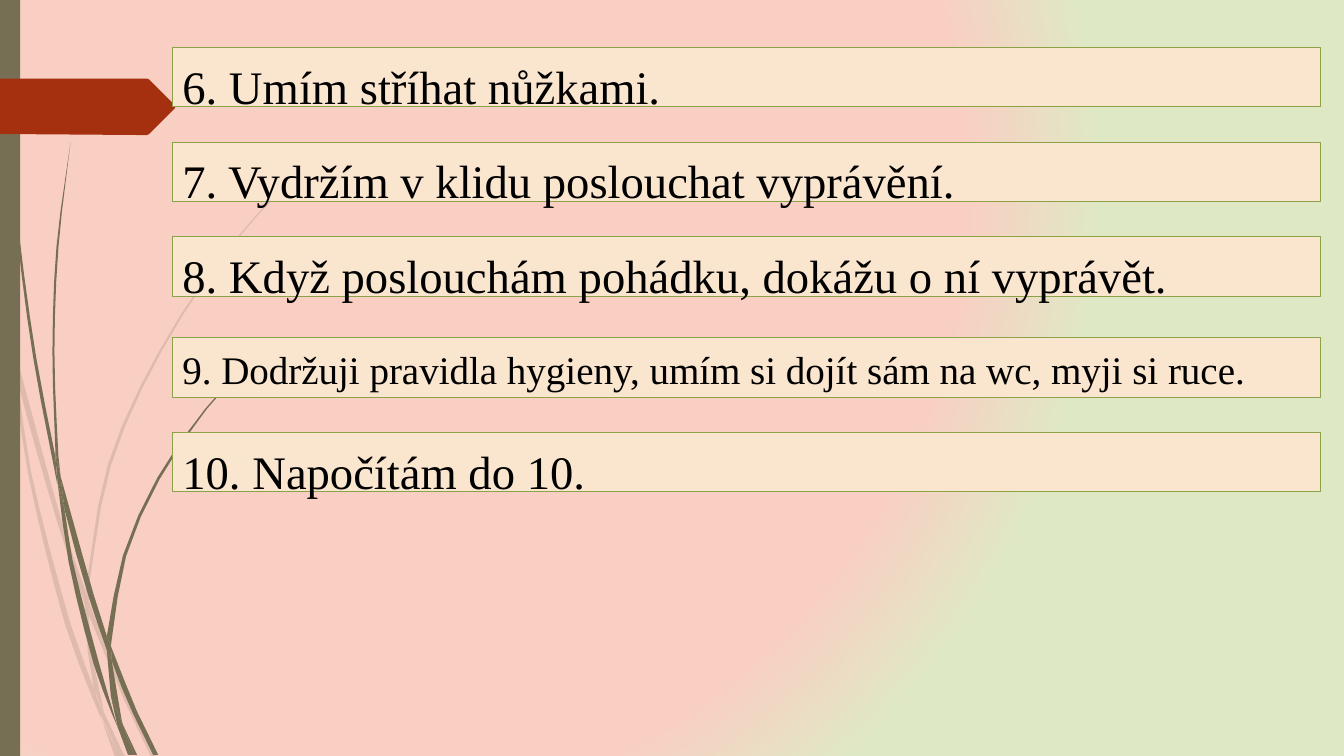
from dataclasses import dataclass
from math import ceil, dist

from lxml.etree import SubElement
from pptx import Presentation
from pptx.dml.color import RGBColor
from pptx.enum.shapes import MSO_SHAPE
from pptx.enum.text import MSO_ANCHOR, MSO_AUTO_SIZE, PP_ALIGN
from pptx.oxml.ns import qn
from pptx.shapes.autoshape import Shape
from pptx.slide import Slide
from pptx.util import Inches, Pt

COLORS = {
    "pink": "F9CFC3",
    "green": "DFE8C4",
    "grass": "766F54",
    "pennant": "A53010",
    "card": "FAE5CF",
    "card_edge": "8BA249",
    "text": "000000",
}
FONT = "Times New Roman"
LONGEST_STEP = 0.5

Point = tuple[float, float]
Edge = list[Point]


@dataclass
class Blade:
    outer: Edge
    inner: Edge


@dataclass
class Skill:
    text: str
    top: float
    size: float = 33.3
    inset: float = 0.1


SKILLS = [
    Skill("6. Umím stříhat nůžkami.", 0.47),
    Skill("7. Vydržím v klidu poslouchat vyprávění.", 1.41),
    Skill("8. Když poslouchám pohádku, dokážu o ní vyprávět.", 2.35),
    Skill("9. Dodržuji pravidla hygieny, umím si dojít sám na wc, myji si ruce.", 3.35, 27.9, 0.08),
    Skill("10. Napočítám do 10.", 4.29),
]

PALE_GRASS = [
    Blade([(0.11, 3.5), (0.09, 3.22), (0, 2.82)], [(0, 2.99), (0.1, 3.44)]),
    Blade([(0.14, 3.45), (0.17, 3.76), (0.58, 5.22), (0.84, 5.99)],
          [(0.85, 5.86), (0.62, 5.2), (0.14, 3.45)]),
    Blade([(0.88, 6.1), (1.23, 6.94), (1.5, 7.51)],
          [(1.55, 7.51), (1.27, 6.92), (0.92, 6.07), (0.88, 5.96)]),
    Blade([(1.05, 7.11), (1.19, 7.51)], [(1.24, 7.51)]),
    Blade([(0.11, 3.5), (0.17, 3.76), (0.31, 4.69), (0.7, 6.19), (0.93, 6.83), (1.01, 7.14)],
          [(0.92, 6.93), (0.65, 6.21), (0.28, 4.7), (0.11, 3.5)]),
    Blade([(0.84, 5.99), (0.87, 6.46), (0.93, 6.83), (1.05, 7.11)],
          [(1.03, 7.06), (0.91, 6.46), (0.88, 6.1)]),
    Blade([(0.88, 5.96), (0.88, 5.84), (1.1, 4.62), (1.6, 3.49), (2.29, 2.45), (3.12, 1.54)],
          [(3.12, 1.53), (2.28, 2.44), (1.58, 3.48), (1.07, 4.61), (0.85, 5.84)]),
    Blade([(1.01, 7.14), (1.14, 7.51)], [(1.19, 7.51)]),
    Blade([(0.88, 6.1), (0.88, 5.96), (0.85, 5.86)], [(0.84, 5.99)]),
    Blade([(0.93, 6.83), (0.99, 7.07), (1.19, 7.51)], [(1.05, 7.11), (0.96, 6.92)]),
]

DARK_GRASS = [
    Blade([(0.03, 0), (0.07, 1.1), (0.17, 2.33), (0.33, 3.55), (0.57, 4.81)],
          [(0.55, 4.53), (0.36, 3.55), (0.19, 2.32), (0.08, 1.09), (0.04, 0)]),
    Blade([(0.6, 4.72), (0.64, 5.05), (0.88, 5.92), (1.06, 6.45)],
          [(1.06, 6.31), (0.93, 5.9), (0.6, 4.72)]),
    Blade([(1.1, 6.41), (1.11, 6.56), (1.32, 7.08), (1.52, 7.49)],
          [(1.57, 7.49), (1.36, 7.06), (1.1, 6.41)]),
    Blade([(0.57, 4.77), (0.64, 5.05), (0.72, 5.56), (0.98, 6.57), (1.17, 7.22)],
          [(1.11, 7.08), (0.93, 6.59), (0.68, 5.57), (0.57, 4.77)]),
    Blade([(0.6, 4.72), (0.58, 4.53), (0.54, 3.49), (0.58, 2.45), (0.7, 1.41)],
          [(0.7, 1.41), (0.56, 2.45), (0.52, 3.49), (0.55, 4.49)]),
    Blade([(1.22, 7.19), (1.33, 7.49)], [(1.36, 7.49)]),
    Blade([(0.55, 4.53), (0.57, 4.77), (0.64, 5.05)], [(0.6, 4.72), (0.55, 4.49)]),
    Blade([(1.1, 6.41), (1.11, 6.33), (1.25, 5.52), (1.58, 4.76), (2.05, 4.06), (2.61, 3.44)],
          [(2.6, 3.44), (2.04, 4.05), (1.56, 4.74), (1.22, 5.51), (1.06, 6.31)]),
    Blade([(1.17, 7.22), (1.27, 7.49)], [(1.31, 7.49)]),
    Blade([(1.06, 6.45), (1.1, 6.91), (1.22, 7.19)], [(1.21, 7.16), (1.11, 6.56)]),
    Blade([(1.06, 6.45), (1.11, 6.56)], [(1.1, 6.41), (1.06, 6.31)]),
    Blade([(1.1, 6.91), (1.17, 7.22), (1.3, 7.49)], [(1.33, 7.49), (1.22, 7.19)]),
]

PENNANT = [(0, 0.78), (1.46, 0.78), (1.48, 0.79), (1.73, 1.04), (1.74, 1.06),
           (1.73, 1.08), (1.48, 1.33), (1.46, 1.34), (1.36, 1.34), (0, 1.33)]


def rgb(name: str) -> RGBColor:
    return RGBColor.from_string(COLORS[name])


def smooth(edge: Edge) -> Edge:
    if len(edge) < 3:
        return edge
    slopes = []
    for i in range(len(edge)):
        near = edge[max(i - 1, 0):i + 2]
        span = sum(dist(a, b) for a, b in zip(near, near[1:]))
        slopes.append([(near[-1][axis] - near[0][axis]) / span for axis in (0, 1)])
    curve = [edge[0]]
    for a, b, m, n in zip(edge, edge[1:], slopes, slopes[1:]):
        length = dist(a, b)
        steps = ceil(length / LONGEST_STEP)
        for step in range(1, steps + 1):
            t = step / steps
            rise = t * t * (3 - 2 * t)
            leave, arrive = length * t * (1 - t) ** 2, length * t * t * (t - 1)
            curve.append(tuple(a[k] + rise * (b[k] - a[k]) + leave * m[k] + arrive * n[k]
                               for k in (0, 1)))
    return curve


def paint(shape: Shape, color: str, opacity: int = 100) -> None:
    shape.shadow.inherit = False
    shape.fill.solid()
    shape.fill.fore_color.rgb = rgb(color)
    shape.line.fill.background()
    if opacity < 100:
        tint = shape.element.spPr.find(qn("a:solidFill"))[0]
        SubElement(tint, qn("a:alpha")).set("val", str(opacity * 1000))


def draw_outline(shapes, outline: Edge, color: str, opacity: int = 100) -> None:
    corners = [(Inches(x), Inches(y)) for x, y in outline]
    builder = shapes.build_freeform(*corners[0])
    builder.add_line_segments(corners[1:], close=True)
    paint(builder.convert_to_shape(), color, opacity)


def draw_grass(slide: Slide, blades: list[Blade], opacity: int = 100) -> None:
    tuft = slide.shapes.add_group_shape()
    for blade in blades:
        draw_outline(tuft.shapes, smooth(blade.outer) + smooth(blade.inner), "grass", opacity)


def draw_skill(slide: Slide, skill: Skill) -> None:
    card = slide.shapes.add_shape(MSO_SHAPE.RECTANGLE, Inches(1.71), Inches(skill.top),
                                  Inches(11.39), Inches(0.59))
    paint(card, "card")
    card.line.color.rgb = rgb("card_edge")
    card.line.width = Pt(0.75)
    frame = card.text_frame
    frame.word_wrap = True
    frame.auto_size = MSO_AUTO_SIZE.NONE
    frame.vertical_anchor = MSO_ANCHOR.TOP
    frame.margin_top, frame.margin_bottom = Inches(skill.inset), 0
    frame.paragraphs[0].alignment = PP_ALIGN.LEFT
    run = frame.paragraphs[0].add_run()
    run.text = skill.text
    run.font.name = FONT
    run.font.size = Pt(skill.size)
    run.font.color.rgb = rgb("text")


def fill_background(slide: Slide) -> None:
    fill = slide.background.fill
    fill.gradient()
    for stop, color, position in zip(fill.gradient_stops, ("pink", "green"), (0.81, 1)):
        stop.color.rgb = rgb(color)
        stop.position = position
    gradient = slide.element.find(".//" + qn("a:gradFill"))
    gradient.remove(gradient.find(qn("a:lin")))
    circle = SubElement(gradient, qn("a:path"))
    circle.set("path", "circle")
    focus = SubElement(circle, qn("a:fillToRect"))
    for side, percent in zip("ltrb", (50, 50, 100, 100)):
        focus.set(side, str(percent * 1000))


def main() -> None:
    deck = Presentation()
    deck.slide_width, deck.slide_height = Inches(13.33), Inches(7.5)
    slide = deck.slides.add_slide(deck.slide_layouts[6])
    fill_background(slide)
    draw_grass(slide, PALE_GRASS, 20)
    draw_grass(slide, DARK_GRASS)
    stem = slide.shapes.add_shape(MSO_SHAPE.RECTANGLE, 0, 0, Inches(0.2), Inches(7.5))
    paint(stem, "grass")
    draw_outline(slide.shapes, PENNANT, "pennant")
    for skill in SKILLS:
        draw_skill(slide, skill)
    deck.save("out.pptx")


if __name__ == "__main__":
    main()
